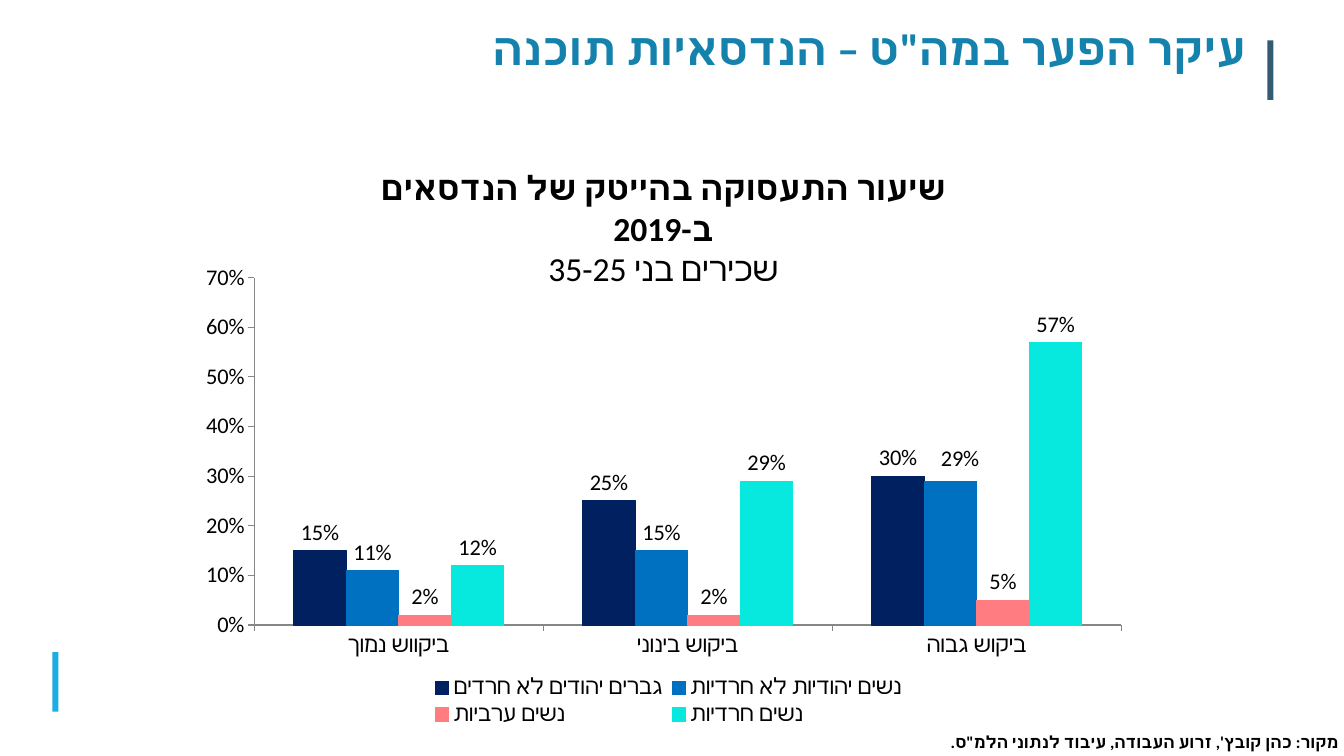
import pptx
import pptx.chart.data
import pptx.dml.color
import pptx.enum.chart
import pptx.enum.shapes
import pptx.enum.text
import pptx.oxml
import pptx.oxml.ns
import pptx.util
from pptx.util import Inches

FONT = "Calibri"
COLORS = {"title": "1482AC", "text": "000000", "axis": "868686",
          "left_bar": "1CADE4", "right_bar": "335B74",
          "men": "002060", "jewish": "0070C0", "arab": "FF7C80", "haredi": "07E9DE"}
CATEGORIES = ["ביקווש נמוך", "ביקוש בינוני", "ביקוש גבוה"]
SERIES = [("גברים יהודים לא חרדים", (0.15, 0.25, 0.3), "men"),
          ("נשים יהודיות לא חרדיות", (0.11, 0.15, 0.29), "jewish"),
          ("נשים ערביות", (0.02, 0.02, 0.05), "arab"),
          ("נשים חרדיות", (0.12, 0.29, 0.57), "haredi")]
ALIGN = pptx.enum.text.PP_ALIGN


def rgb(name):
    """Return the named colour."""
    return pptx.dml.color.RGBColor.from_string(COLORS[name])


def set_font(font, size, color="text", bold=False):
    """Format a font, for Hebrew script as well as Latin."""
    font.name, font.size, font.bold = FONT, pptx.util.Pt(size), bold
    font.color.rgb = rgb(color)


def write(para, text, size, color="text", bold=True, align=ALIGN.CENTER):
    """Write one right-to-left run into a paragraph."""
    para.alignment = align
    para._p.get_or_add_pPr().set("rtl", "1")
    span = para.add_run()
    span.text = text
    set_font(span.font, size, color, bold)
    script = pptx.oxml.parse_xml(
        f'<a:cs {pptx.oxml.ns.nsdecls("a")} typeface="{FONT}"/>')
    span.font._rPr.append(script)


def place(shape, box):
    """Move a shape to a box and return its top-anchored, wrapping text frame."""
    shape.left, shape.top, shape.width, shape.height = map(Inches, box)
    frame = shape.text_frame
    frame.word_wrap = True
    frame.auto_size = pptx.enum.text.MSO_AUTO_SIZE.NONE
    frame.vertical_anchor = pptx.enum.text.MSO_ANCHOR.TOP
    return frame


def add_text(page, box):
    """Add a text box and return its frame."""
    return place(page.shapes.add_textbox(0, 0, 0, 0), box)


def add_bar(page, box, color):
    """Add a plain accent bar."""
    bar = page.shapes.add_shape(
        pptx.enum.shapes.MSO_SHAPE.RECTANGLE, *map(Inches, box))
    bar.shadow.inherit = False
    bar.fill.solid()
    bar.fill.fore_color.rgb = rgb(color)
    bar.line.fill.background()


def layout_xml(x, y, w=None, h=None, inner=False):
    """Build a manual chart layout in fractions of the chart."""
    parts = '<c:layoutTarget val="inner"/>' if inner else ""
    if w is not None:
        parts += '<c:xMode val="edge"/><c:yMode val="edge"/>'
    for tag, value in zip("xywh", (x, y, w, h)):
        if value is not None:
            parts += f'<c:{tag} val="{value}"/>'
    return pptx.oxml.parse_xml(
        f'<c:layout {pptx.oxml.ns.nsdecls("c")}><c:manualLayout>{parts}'
        '</c:manualLayout></c:layout>')


def clear_layout(element):
    """Remove an automatic layout from a chart element."""
    for old in element.xpath("./c:layout"):
        element.remove(old)


def style_axes(chart):
    """Format both axes."""
    for axis in (chart.category_axis, chart.value_axis):
        axis.has_major_gridlines = False
        axis.major_tick_mark = pptx.enum.chart.XL_TICK_MARK.OUTSIDE
        axis.minor_tick_mark = pptx.enum.chart.XL_TICK_MARK.NONE
        axis.format.line.color.rgb = rgb("axis")
        axis.format.line.width = pptx.util.Pt(0.75)
        set_font(axis.tick_labels.font, 16)
    values = chart.value_axis
    values.minimum_scale, values.maximum_scale, values.major_unit = 0, 0.7, 0.1
    values.tick_labels.number_format = "0%"
    values.tick_labels.number_format_is_linked = False


def style_series(series, color):
    """Colour one series and label its columns."""
    series.format.fill.solid()
    series.format.fill.fore_color.rgb = rgb(color)
    series.format.line.color.rgb = rgb(color)
    series.format.line.width = pptx.util.Pt(0.75)
    series.invert_if_negative = False
    labels = series.data_labels
    labels.show_value = True
    labels.number_format, labels.number_format_is_linked = "0%", False
    labels.position = pptx.enum.chart.XL_LABEL_POSITION.OUTSIDE_END
    set_font(labels.font, 16)


def add_employment_chart(page, box):
    """Add the clustered columns of employment rates."""
    data = pptx.chart.data.CategoryChartData(number_format="0%")
    data.categories = CATEGORIES
    for name, values, color in SERIES:
        data.add_series(name, values)
    chart = page.shapes.add_chart(
        pptx.enum.chart.XL_CHART_TYPE.COLUMN_CLUSTERED,
        *map(Inches, box), data).chart
    chart.has_title = False
    set_font(chart.font, 16)
    style_axes(chart)
    plot = chart.plots[0]
    plot.gap_width, plot.overlap, plot.vary_by_categories = 150, 0, False
    for series, (name, values, color) in zip(plot.series, SERIES):
        style_series(series, color)

    moved = plot.series[1]
    moved.points[2].data_label.position = pptx.enum.chart.XL_LABEL_POSITION.OUTSIDE_END
    index = moved._element.xpath("./c:dLbls/c:dLbl/c:idx")[0]
    index.addnext(layout_xml(0.01, -0.01))

    chart.has_legend = True
    legend = chart.legend
    legend.position = pptx.enum.chart.XL_LEGEND_POSITION.BOTTOM
    legend.include_in_layout = False
    set_font(legend.font, 16)
    clear_layout(legend._element)
    legend._element.xpath("./c:legendPos")[0].addnext(layout_xml(0.25, 0.88, 0.51, 0.12))
    area = chart._chartSpace.xpath("./c:chart/c:plotArea")[0]
    clear_layout(area)
    area.insert(0, layout_xml(0.07, 0.05, 0.91, 0.73, inner=True))


def add_headings(page):
    """Place the slide title and the two-part chart heading."""
    title = place(page.shapes.title, (2.46, 0.16, 10, 0.64))
    write(title.paragraphs[0], 'עיקר הפער במה"ט – הנדסאיות תוכנה', 32, "title",
          align=ALIGN.JUSTIFY)
    heading = add_text(page, (3.61, 1.61, 5.94, 0.91))
    write(heading.paragraphs[0], "שיעור התעסוקה בהייטק של הנדסאים ב-2019", 24)
    write(heading.add_paragraph(), "שכירים בני 35-25", 24, bold=False)


def main():
    """Build and save the deck."""
    deck = pptx.Presentation()
    deck.slide_width, deck.slide_height = Inches(13.33), Inches(7.5)
    page = deck.slides.add_slide(deck.slide_layouts[5])
    add_bar(page, (0.52, 6.47, 0.06, 0.59), "left_bar")
    add_bar(page, (12.57, 0.4, 0.06, 0.59), "right_bar")
    add_headings(page)
    add_employment_chart(page, (1.86, 2.52, 9.45, 4.72))
    source = add_text(page, (0.41, 7.21, 12.92, 0.29))
    source.margin_right = Inches(0.05)
    write(source.paragraphs[0], "מקור: כהן קובץ', זרוע העבודה, עיבוד לנתוני הלמ\"ס.",
          12, align=ALIGN.RIGHT)
    deck.save("out.pptx")


if __name__ == "__main__":
    main()
